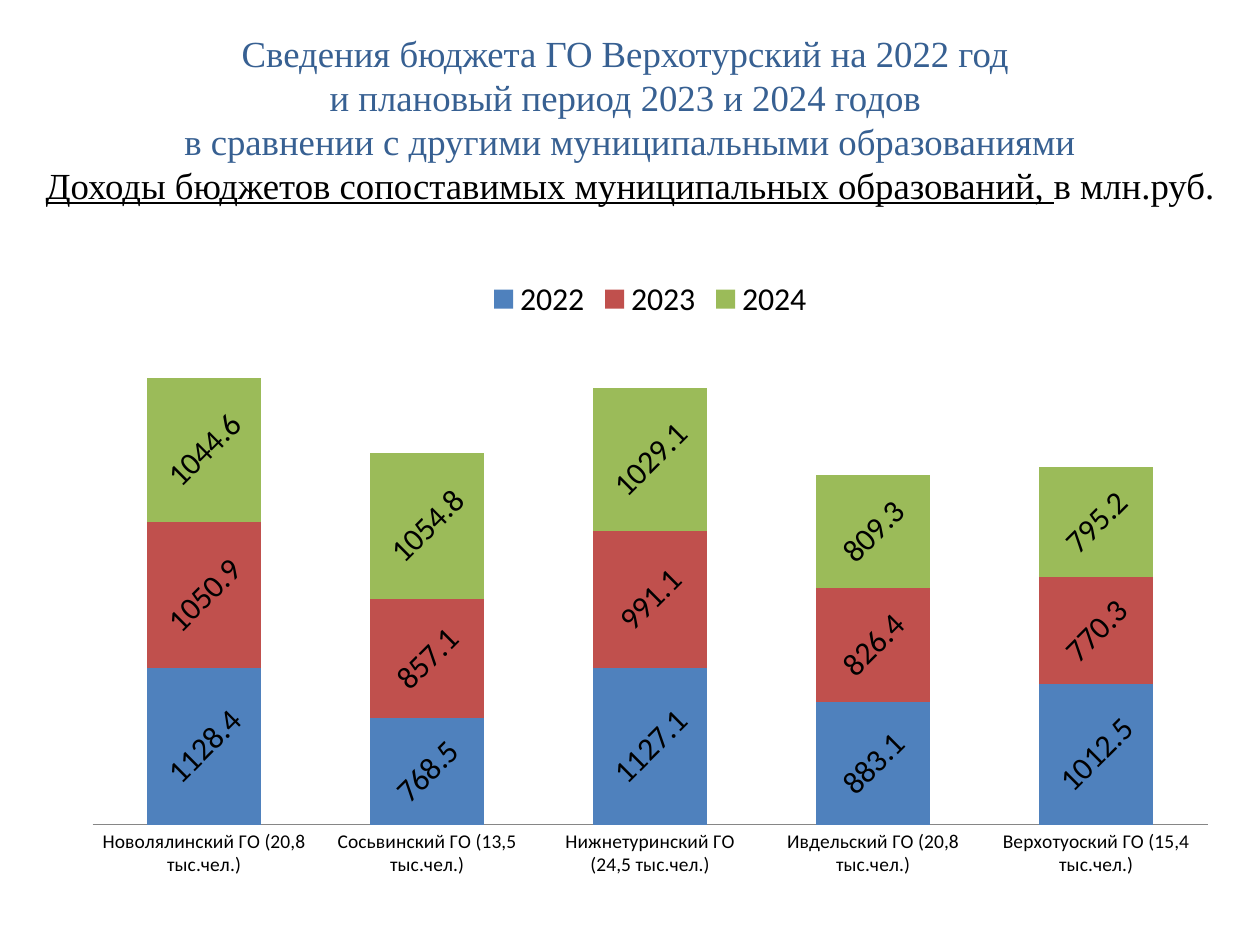
from dataclasses import dataclass

from lxml.etree import SubElement
from pptx import Presentation
from pptx.chart.chart import Chart
from pptx.chart.data import CategoryChartData
from pptx.chart.series import BarSeries
from pptx.dml.color import RGBColor
from pptx.enum.chart import XL_CHART_TYPE, XL_LABEL_POSITION, XL_LEGEND_POSITION, XL_TICK_MARK
from pptx.enum.text import MSO_ANCHOR, PP_ALIGN
from pptx.oxml.ns import qn
from pptx.slide import Slide
from pptx.util import Inches, Pt


@dataclass(frozen=True)
class Theme:
    heading: str = "376092"
    ink: str = "000000"
    axis: str = "868686"
    title_font: str = "Times New Roman"
    chart_font: str = "Calibri"
    title_size: float = 21
    chart_size: float = 18.2
    category_size: float = 11.1


@dataclass(frozen=True)
class TitleSpan:
    text: str
    color: str
    underline: bool = False
    starts_line: bool = True


@dataclass(frozen=True)
class YearIncome:
    year: str
    color: str
    values: tuple[float, ...]


THEME = Theme()

TITLE = (
    TitleSpan("Сведения бюджета ГО Верхотурский на 2022 год ", THEME.heading),
    TitleSpan("и плановый период 2023 и 2024 годов ", THEME.heading),
    TitleSpan("в сравнении с другими муниципальными образованиями", THEME.heading),
    TitleSpan("Доходы бюджетов сопоставимых муниципальных образований, ", THEME.ink, underline=True),
    TitleSpan("в млн.руб.", THEME.ink, starts_line=False),
)

MUNICIPALITIES = (
    "Новолялинский ГО (20,8 тыс.чел.)",
    "Сосьвинский ГО (13,5 тыс.чел.)",
    "Нижнетуринский ГО (24,5 тыс.чел.)",
    "Ивдельский ГО (20,8 тыс.чел.)",
    "Верхотуоский ГО (15,4 тыс.чел.)",
)

INCOMES = (
    YearIncome("2022", "4F81BD", (1128.4, 768.5, 1127.1, 883.1, 1012.5)),
    YearIncome("2023", "C0504D", (1050.9, 857.1, 991.1, 826.4, 770.3)),
    YearIncome("2024", "9BBB59", (1044.6, 1054.8, 1029.1, 809.3, 795.2)),
)

PLOT_LAYOUT = {"x": 0.02, "y": 0.12, "w": 0.96, "h": 0.78}
LABEL_ROTATION = -45


def apply(target: object, settings: dict) -> None:
    for name, value in settings.items():
        setattr(target, name, value)


def style_font(font: object, name: str, size: float, color: str, underline: bool = False) -> None:
    apply(font, {"name": name, "size": Pt(size), "bold": False})
    if underline:
        font.underline = True
    font.color.rgb = RGBColor.from_string(color)


def add_title(page: Slide) -> None:
    box = page.shapes.add_textbox(Inches(0.23), Inches(0), Inches(9.54), Inches(1.88))
    apply(box.text_frame, {"word_wrap": True, "vertical_anchor": MSO_ANCHOR.MIDDLE})
    para = box.text_frame.paragraphs[0]
    para.alignment = PP_ALIGN.CENTER
    for index, part in enumerate(TITLE):
        if index and part.starts_line:
            para.add_line_break()
        span = para.add_run()
        span.text = part.text
        style_font(span.font, THEME.title_font, THEME.title_size, part.color, part.underline)


def style_series(series: BarSeries, color: str) -> None:
    series.format.fill.solid()
    series.format.fill.fore_color.rgb = RGBColor.from_string(color)
    labels = series.data_labels
    apply(labels, {"show_value": True, "position": XL_LABEL_POSITION.CENTER})
    style_font(labels.font, THEME.chart_font, THEME.chart_size, THEME.ink)
    body = labels._element.find(qn("c:txPr")).find(qn("a:bodyPr"))
    body.set("rot", str(LABEL_ROTATION * 60000))
    body.set("vert", "horz")


def place_plot(chart: Chart) -> None:
    area = chart._chartSpace.chart.plotArea
    layout = area.find(qn("c:layout"))
    if layout is None:
        layout = SubElement(area, qn("c:layout"))
        area.insert(0, layout)
    manual = SubElement(layout, qn("c:manualLayout"))
    settings = {"layoutTarget": "inner", "xMode": "edge", "yMode": "edge", **PLOT_LAYOUT}
    for name, value in settings.items():
        SubElement(manual, qn(f"c:{name}")).set("val", str(value))


def add_income_chart(page: Slide) -> None:
    data = CategoryChartData()
    data.categories = MUNICIPALITIES
    for income in INCOMES:
        data.add_series(income.year, income.values)
    chart = page.shapes.add_chart(
        XL_CHART_TYPE.COLUMN_STACKED, Inches(0.55), Inches(2.1), Inches(9.22), Inches(4.94), data
    ).chart
    apply(chart, {"has_title": False, "has_legend": True})
    style_font(chart.font, THEME.chart_font, THEME.chart_size, THEME.ink)
    apply(chart.legend, {"position": XL_LEGEND_POSITION.TOP, "include_in_layout": False})
    apply(chart.plots[0], {"gap_width": 95, "overlap": 100, "vary_by_categories": False})
    apply(chart.value_axis, {
        "visible": False,
        "has_major_gridlines": False,
        "minimum_scale": 0,
        "maximum_scale": 3500,
    })
    axis = chart.category_axis
    apply(axis, {"major_tick_mark": XL_TICK_MARK.NONE, "minor_tick_mark": XL_TICK_MARK.NONE})
    style_font(axis.tick_labels.font, THEME.chart_font, THEME.category_size, THEME.ink)
    axis.format.line.width = Pt(0.75)
    axis.format.line.color.rgb = RGBColor.from_string(THEME.axis)
    for series, income in zip(chart.plots[0].series, INCOMES):
        style_series(series, income.color)
    place_plot(chart)


def main() -> None:
    deck = Presentation()
    apply(deck, {"slide_width": Inches(10), "slide_height": Inches(7.5)})
    page = deck.slides.add_slide(deck.slide_layouts[6])
    add_title(page)
    add_income_chart(page)
    deck.save("out.pptx")


if __name__ == "__main__":
    main()
